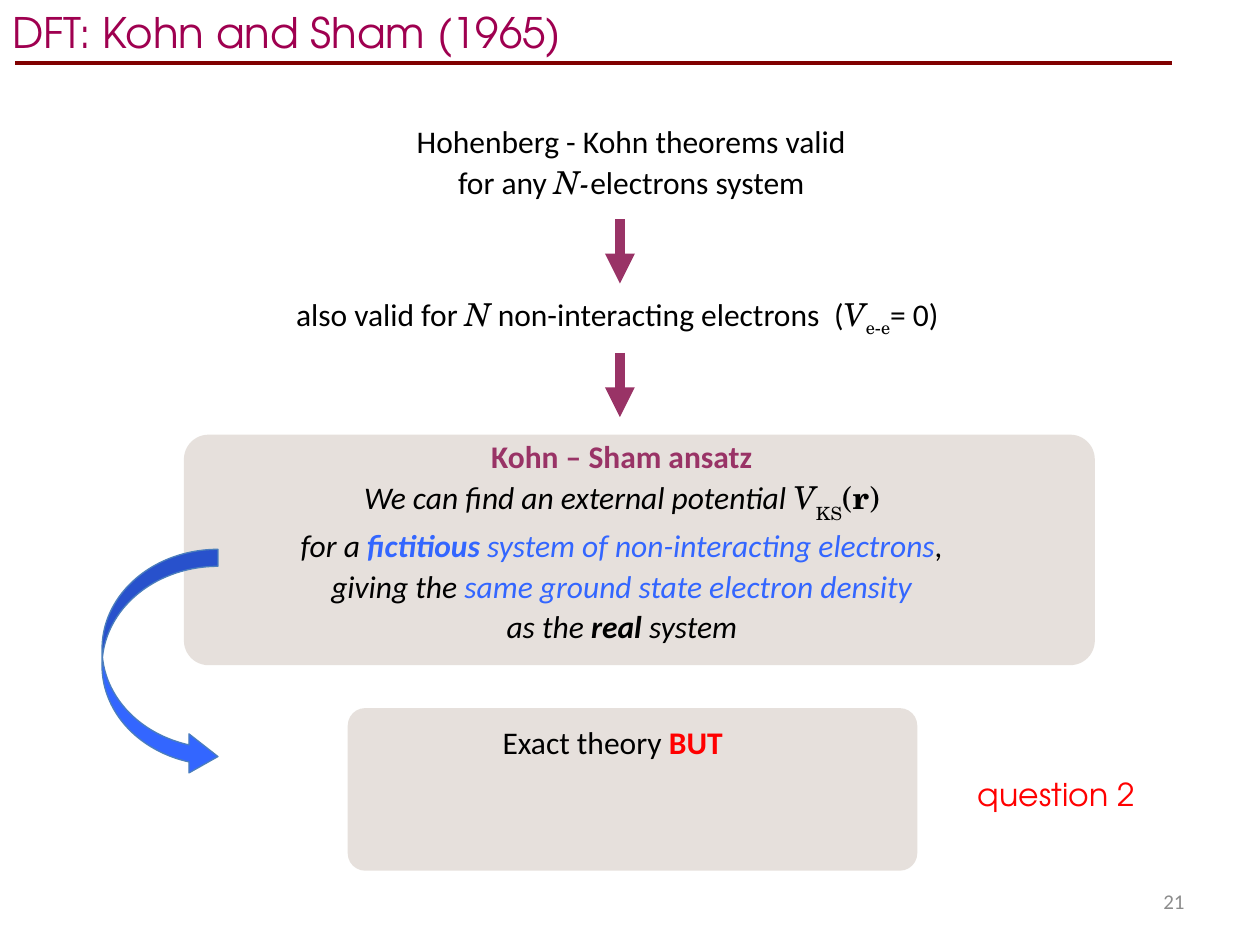
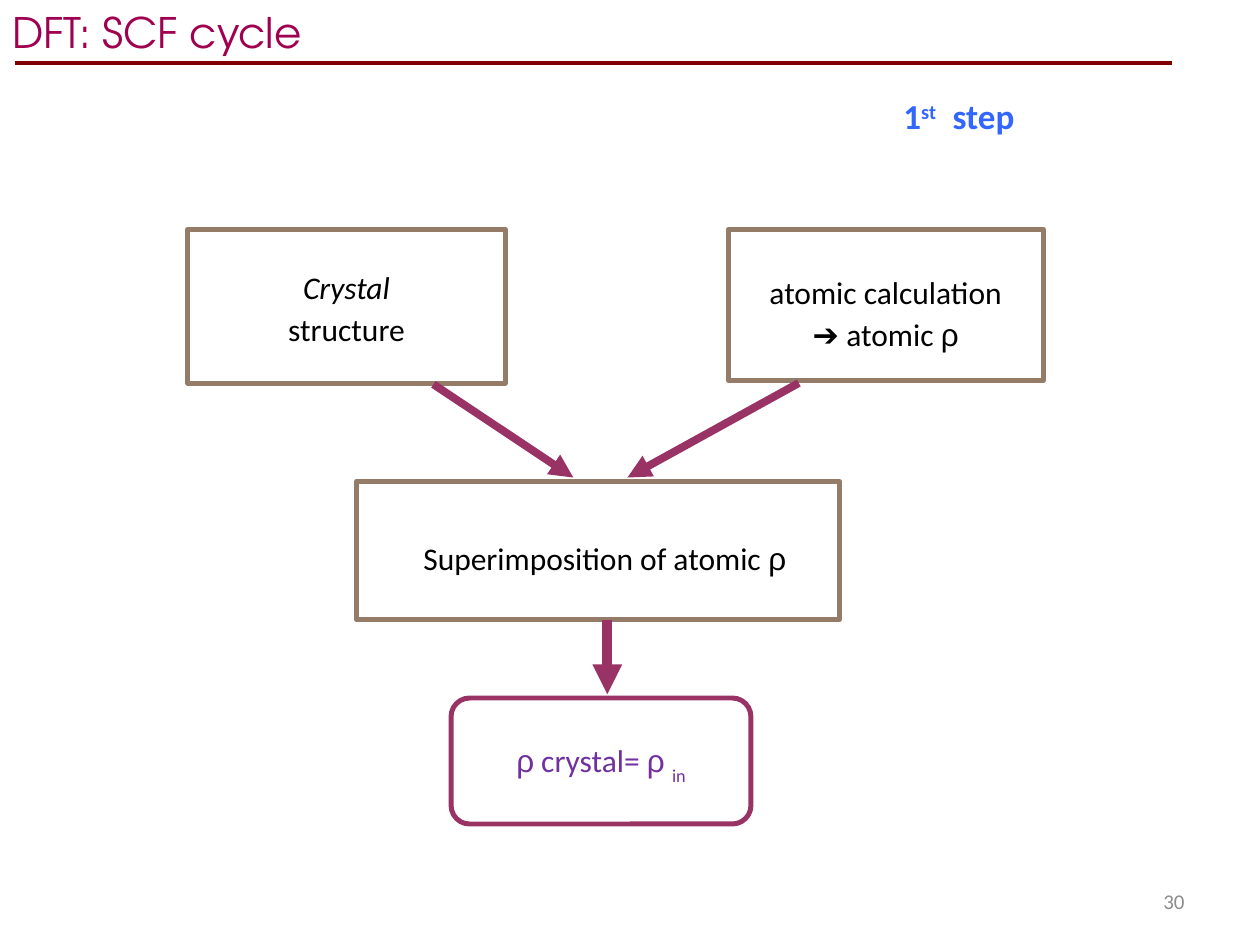
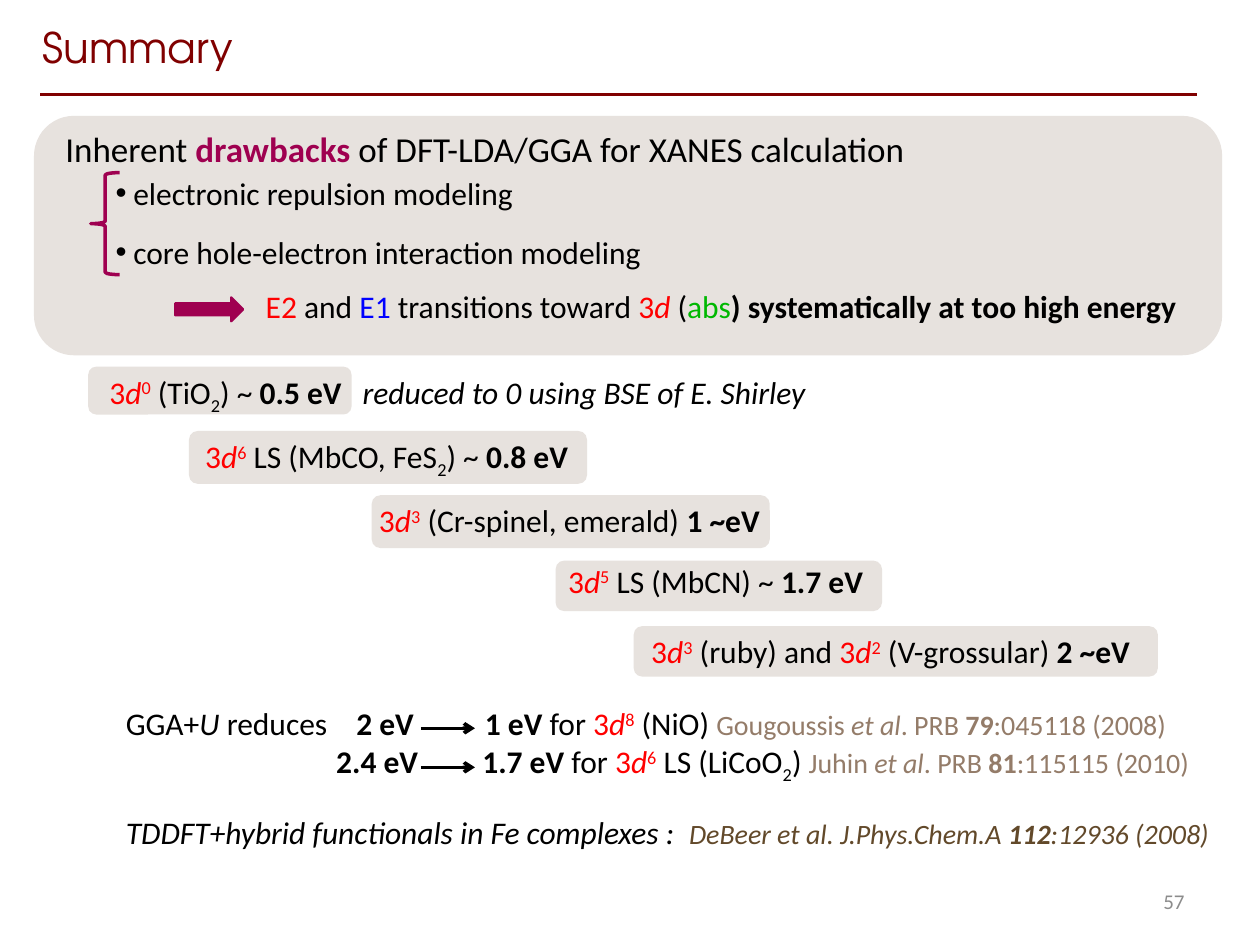
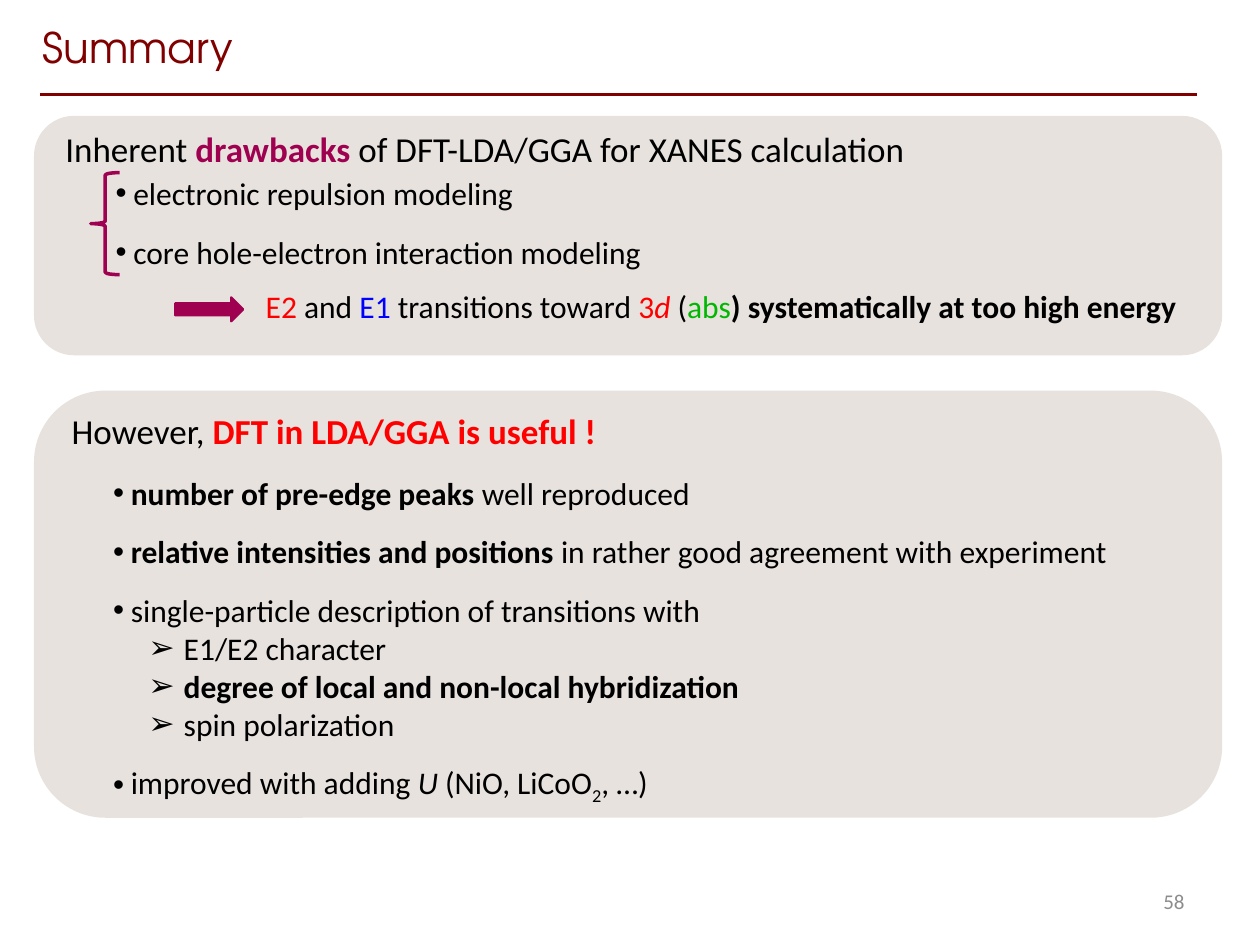
from dataclasses import dataclass

from lxml import etree
from pptx import Presentation
from pptx import util as u
from pptx.dml.color import RGBColor
from pptx.enum import shapes, text
from pptx.oxml.ns import qn

PX = 9144
KIND = shapes.MSO_SHAPE
CENTER = text.PP_ALIGN.CENTER
RIGHT = text.PP_ALIGN.RIGHT
MIDDLE = text.MSO_ANCHOR.MIDDLE


@dataclass(frozen=True)
class Theme:
    body_font: str = "Calibri"
    title_font: str = "TeX Gyre Adventor"
    math_font: str = "TeX Gyre Schola"
    greek_font: str = "Arial"
    black: str = "000000"
    rule: str = "800000"
    berry: str = "9F0050"
    plum: str = "993366"
    taupe: str = "947C69"
    brown: str = "62492A"
    red: str = "FF0000"
    blue: str = "3366FF"
    blue_edge: str = "4B7EBC"
    pure_blue: str = "0000FF"
    green: str = "00B801"
    violet: str = "7030A0"
    grey: str = "8C8C8C"
    title: int = 24
    lead: int = 20
    body: int = 18
    citation: int = 16
    footer: int = 12
    gap: int = 12


T = Theme()


@dataclass(frozen=True)
class Run:
    words: str
    color: str = T.black
    bold: bool = False
    italic: bool = False
    base: int = 0
    font: str = T.body_font
    size: int = T.body


@dataclass(frozen=True)
class Para:
    runs: tuple[Run, ...]
    align: text.PP_ALIGN = text.PP_ALIGN.LEFT
    spacing: float | u.Pt | None = None
    before: int = 0
    bullet: str = ""
    left: int = 0
    hang: int = 0
    tabs: tuple[int, ...] = ()


@dataclass(frozen=True)
class Box:
    left: int
    top: int
    width: int
    height: int


@dataclass(frozen=True)
class Chip:
    panel: Box
    label: Box
    para: Para


@dataclass(frozen=True)
class Arrow:
    start: tuple[int, int]
    end: tuple[int, int]
    width: float = 5.67
    color: str = T.plum
    head: str = "triangle"


def emu(box: Box) -> tuple[int, ...]:
    return box.left * PX, box.top * PX, box.width * PX, box.height * PX


def rgb(color: str) -> RGBColor:
    return RGBColor.from_string(color)


def write_para(paragraph, para: Para) -> None:
    props = paragraph._p.get_or_add_pPr()
    if para.bullet:
        props.set("marL", str(para.left * PX))
        props.set("indent", str(-para.hang * PX))
        etree.SubElement(props, qn("a:buFont"), typeface=T.greek_font)
        etree.SubElement(props, qn("a:buChar"), char=para.bullet)
    if para.tabs:
        stops = etree.SubElement(props, qn("a:tabLst"))
        for stop in para.tabs:
            etree.SubElement(stops, qn("a:tab"), pos=str(stop * PX), algn="l")
    paragraph.alignment = para.align
    paragraph.line_spacing = para.spacing
    if para.before:
        paragraph.space_before = u.Pt(para.before)
    for part in para.runs:
        run = paragraph.add_run()
        run.text = part.words
        run.font.name = part.font
        run.font.size = u.Pt(part.size)
        run.font.bold = part.bold
        run.font.italic = part.italic
        run.font.color.rgb = rgb(part.color)
        if part.base:
            run._r.get_or_add_rPr().set("baseline", str(part.base * 1000))


def add_text(slide, box: Box, *paras: Para, wrap: bool = False, flush: bool = False,
             anchor: text.MSO_ANCHOR = text.MSO_ANCHOR.TOP, grow: bool = True) -> None:
    frame = slide.shapes.add_textbox(*emu(box)).text_frame
    frame.word_wrap = wrap
    frame.vertical_anchor = anchor
    if grow:
        frame.auto_size = text.MSO_AUTO_SIZE.SHAPE_TO_FIT_TEXT
    if flush:
        frame.margin_left = frame.margin_right = frame.margin_top = frame.margin_bottom = 0
    for index, para in enumerate(paras):
        write_para(frame.add_paragraph() if index else frame.paragraphs[0], para)


def add_figure(slide, kind: KIND, box: Box, fill: str = "", alpha: int = 100,
               edge: str = "", edge_width: float = 1, adjust: tuple[float, ...] = ()) -> None:
    figure = slide.shapes.add_shape(kind, *emu(box))
    figure.shadow.inherit = False
    for index, value in enumerate(adjust):
        figure.adjustments[index] = value
    if fill:
        figure.fill.solid()
        figure.fill.fore_color.rgb = rgb(fill)
        if alpha < 100:
            tone = figure._element.spPr.find(qn("a:solidFill"))[0]
            etree.SubElement(tone, qn("a:alpha"), val=str(alpha * 1000))
    else:
        figure.fill.background()
    if edge:
        figure.line.color.rgb = rgb(edge)
        figure.line.width = u.Pt(edge_width)
    else:
        figure.line.fill.background()


def add_panel(slide, box: Box, alpha: int = 22, corner: float = 0.167) -> None:
    add_figure(slide, KIND.ROUNDED_RECTANGLE, box, T.taupe, alpha, adjust=(corner,))


def add_frame(slide, box: Box, edge: str = T.taupe, corner: float = 0) -> None:
    add_figure(slide, KIND.ROUNDED_RECTANGLE, box, edge=edge, edge_width=2.83, adjust=(corner,))


def add_arrow(slide, arrow: Arrow) -> None:
    ends = [length * PX for length in (*arrow.start, *arrow.end)]
    connector = slide.shapes.add_connector(shapes.MSO_CONNECTOR.STRAIGHT, *ends)
    connector.line.color.rgb = rgb(arrow.color)
    connector.line.width = u.Pt(arrow.width)
    props = connector._element.spPr
    if arrow.head:
        etree.SubElement(props.find(qn("a:ln")), qn("a:tailEnd"), type=arrow.head)
    etree.SubElement(props, qn("a:effectLst"))


def start_slide(deck, title: str, number: int, color: str, title_box: Box,
                rule_start: tuple[int, int]):
    slide = deck.slides.add_slide(deck.slide_layouts[6])
    add_text(slide, title_box, Para((Run(title, color, font=T.title_font, size=T.title),)))
    left, top = rule_start
    add_arrow(slide, Arrow(rule_start, (left + 918, top), 2, T.rule, ""))
    add_text(slide, Box(717, 695, 233, 40),
             Para((Run(str(number), T.grey, size=T.footer),), RIGHT),
             wrap=True, anchor=MIDDLE, grow=False)
    return slide


def start_dft(deck, title: str, number: int, width: int):
    return start_slide(deck, title, number, T.berry, Box(0, 0, width, 50), (12, 50))


def start_summary(deck, number: int):
    slide = start_slide(deck, "Summary", number, T.rule, Box(24, 12, 172, 50), (32, 75))
    add_drawbacks(slide)
    return slide


def math(words: str, italic: bool = False, bold: bool = False, base: int = 0) -> Run:
    return Run(words, bold=bold, italic=italic, base=base, font=T.math_font)


def rho(color: str = T.black) -> Run:
    return Run("ρ", color, font=T.greek_font)


def shell(electrons: int) -> tuple[Run, ...]:
    return (Run("3", T.red), Run("d", T.red, italic=True),
            Run(str(electrons), T.red, base=30))


def reference(authors: str, volume: str, pages: str) -> tuple[Run, ...]:
    def cite(words: str, **style: bool) -> Run:
        return Run(words, T.taupe, size=T.citation, **style)

    return (cite(authors), cite(" et al", italic=True), cite(". PRB "),
            cite(volume, bold=True), cite(pages))


def dot(*runs: Run, before: int = T.gap) -> Para:
    return Para(runs, before=before, bullet="•", left=14, hang=14)


def chevron(words: str, bold: bool = False) -> Para:
    return Para((Run(words, bold=bold),), bullet="➢", left=56, hang=28)


def add_drawbacks(slide) -> None:
    add_panel(slide, Box(27, 92, 943, 190))
    add_text(slide, Box(42, 96, 692, 44), Para((
        Run("Inherent ", size=T.lead),
        Run("drawbacks", T.berry, bold=True, size=T.lead),
        Run(" of DFT-LDA/GGA for XANES calculation", size=T.lead))))
    add_text(slide, Box(82, 133, 440, 88),
             dot(Run("electronic repulsion modeling"), before=0),
             dot(Run("core hole-electron interaction modeling")))
    add_text(slide, Box(201, 223, 769, 40), Para((
        Run("E2", T.red), Run(" and "), Run("E1", T.pure_blue),
        Run(" transitions toward "), *shell(0)[:2], Run(" ("), Run("abs", T.green),
        Run(") systematically at too high energy", bold=True))), wrap=True)
    add_figure(slide, KIND.RIGHT_ARROW, Box(139, 236, 54, 19), T.berry,
               edge=T.berry, edge_width=1.25)
    add_figure(slide, KIND.LEFT_BRACE, Box(72, 137, 23, 81), edge=T.berry, edge_width=2)


def build_kohn_sham(deck) -> None:
    slide = start_dft(deck, "DFT: Kohn and Sham (1965)", 21, 473)

    def line(*runs: Run) -> Para:
        return Para(runs, CENTER, 1.07)

    def said(words: str, color: str = T.black, bold: bool = False) -> Run:
        return Run(words, color, bold, italic=True)

    add_panel(slide, Box(146, 345, 723, 183), 23, 0.107)
    add_text(slide, Box(322, 95, 358, 64),
             line(Run("Hohenberg - Kohn theorems valid")),
             line(Run("for any "), math("N-", italic=True), Run("electrons system")),
             flush=True)
    add_text(slide, Box(235, 232, 544, 32), Para((
        Run("also valid for "), math("N", italic=True),
        Run(" non-interacting electrons\t("), math("V", italic=True),
        math("e-e", base=-25), Run("= 0)")), spacing=1.07, tabs=(427,)),
        wrap=True, flush=True)
    for top in (174, 280):
        add_arrow(slide, Arrow((492, top), (492, top + 51)))
    add_text(slide, Box(101, 345, 785, 162),
             line(Run("Kohn – Sham ansatz", T.plum, bold=True)),
             line(said("We can find an external potential "), math("V", italic=True),
                  math("KS", base=-33), math("("), math("r", bold=True), math(")")),
             line(said("for a "), said("fictitious", T.blue, True),
                  said(" system of non-interacting electrons", T.blue), said(",")),
             line(said("giving the "), said("same ground state electron density", T.blue)),
             line(said("as the "), said("real", bold=True), said(" system")),
             wrap=True, flush=True)
    add_figure(slide, KIND.CURVED_RIGHT_ARROW, Box(81, 436, 92, 180), T.blue,
               edge=T.blue_edge, edge_width=0.75, adjust=(0.147, 0.337, 0.25))
    add_panel(slide, Box(276, 562, 452, 129), 23, 0.107)
    add_text(slide, Box(389, 569, 197, 40),
             Para((Run("Exact theory "), Run("BUT", T.red, bold=True))))
    add_text(slide, Box(766, 610, 145, 40),
             Para((Run("question 2", T.red, font=T.title_font),)))


def build_scf_cycle(deck) -> None:
    slide = start_dft(deck, "DFT: SCF cycle", 30, 255)

    def line(*runs: Run) -> Para:
        return Para(runs, CENTER, u.Pt(24.1))

    def add_step(frame: Box, label: Box, *paras: Para,
                 edge: str = T.taupe, corner: float = 0) -> None:
        add_frame(slide, frame, edge, corner)
        add_text(slide, label, *paras, wrap=True, flush=True, anchor=MIDDLE)

    add_step(Box(149, 182, 252, 122), Box(149, 209, 252, 67),
             line(Run("Crystal", italic=True)), line(Run("structure")))
    add_step(Box(578, 182, 250, 120), Box(578, 213, 250, 67),
             line(Run("atomic calculation")), line(Run("➔ atomic "), rho()))
    add_step(Box(283, 382, 383, 110), Box(291, 425, 378, 32),
             line(Run("Superimposition of atomic "), rho()))
    add_step(Box(358, 554, 238, 100), Box(361, 591, 232, 30),
             Para((rho(T.violet), Run(" crystal= ", T.violet), rho(T.violet),
                   Run(" ", T.violet), Run("in", T.violet, base=-33)), CENTER),
             edge=T.plum, corner=0.147)
    for arrow in (Arrow((344, 305), (455, 379), 4.5),
                  Arrow((634, 304), (498, 379), 4.5),
                  Arrow((482, 492), (482, 551))):
        add_arrow(slide, arrow)

    def step(words: str, base: int = 0) -> Run:
        return Run(words, T.blue, bold=True, base=base, size=T.lead)

    add_text(slide, Box(717, 75, 91, 34),
             Para((step("1"), step("st", 30), step("\tstep")),
                  spacing=u.Pt(24.1), tabs=(39,)), flush=True)


def build_shifts(deck) -> None:
    slide = start_summary(deck, 57)
    low = Run("2", base=-25)
    chips = (
        Chip(Box(70, 291, 209, 38), Box(77, 291, 586, 40), Para((
            *shell(0), Run(" (TiO"), low, Run(") ~ "), Run("0.5 eV", bold=True),
            Run("\treduced to 0 using BSE of E. Shirley", italic=True)), tabs=(201,))),
        Chip(Box(150, 342, 316, 42), Box(153, 342, 313, 40), Para((
            *shell(6), Run(" LS (MbCO, FeS"), low, Run(") ~ "), Run("0.8 eV", bold=True)))),
        Chip(Box(295, 393, 316, 42), Box(291, 393, 336, 40), Para((
            *shell(3), Run(" (Cr-spinel, emerald) "), Run("1 ~eV", bold=True)))),
        Chip(Box(441, 445, 259, 40), Box(441, 441, 259, 40), Para((
            *shell(5), Run(" LS (MbCN) ~ "), Run("1.7 eV", bold=True)))),
        Chip(Box(503, 497, 416, 40), Box(507, 497, 411, 40), Para((
            *shell(3), Run(" (ruby) and "), *shell(2), Run(" (V-grossular) "),
            Run("2 ~eV", bold=True)))),
    )
    for chip in chips:
        add_panel(slide, chip.panel)
        add_text(slide, chip.label, chip.para)

    add_text(slide, Box(90, 554, 867, 71),
             Para((Run("GGA+"), Run("U ", italic=True), Run("reduces"),
                   Run("\t2 eV\t1 eV ", bold=True), Run("for "), *shell(8),
                   Run(" (NiO) "), *reference("Gougoussis", "79", ":045118 (2008)")),
                  tabs=(183, 285)),
             Para((Run("\t2.4 eV\t1.7 eV ", bold=True), Run("for "), *shell(6),
                   Run(" LS (LiCoO"), low, Run(") "),
                   *reference("Juhin", "81", ":115115 (2010)")),
                  tabs=(167, 283)))
    for top in (578, 609):
        add_arrow(slide, Arrow((334, top), (377, top), 2, T.black, "arrow"))

    def cite(words: str, bold: bool = False) -> Run:
        return Run(words, T.brown, bold, italic=True, size=T.citation)

    add_text(slide, Box(90, 640, 895, 40), Para((
        Run("TDDFT+hybrid functionals in Fe complexes :", italic=True),
        cite("\tDeBeer et al. J.Phys.Chem.A "), cite("112", True),
        cite(":12936 (2008)")), tabs=(447,)))


def build_usefulness(deck) -> None:
    slide = start_summary(deck, 58)
    add_panel(slide, Box(27, 310, 943, 339))
    add_text(slide, Box(47, 320, 440, 77), Para((
        Run("However, ", size=T.lead),
        Run("DFT in LDA/GGA is useful !", T.red, bold=True, size=T.lead))))
    add_text(slide, Box(80, 371, 817, 273),
             dot(Run("number of pre-edge peaks ", bold=True), Run("well reproduced"), before=0),
             dot(Run("relative intensities and positions ", bold=True),
                 Run("in rather good agreement with experiment")),
             dot(Run("single-particle description of transitions with")),
             chevron("E1/E2 character"),
             chevron("degree of local and non-local hybridization", bold=True),
             chevron("spin polarization"),
             dot(Run("improved with adding "), Run("U", italic=True),
                 Run(" (NiO, LiCoO"), Run("2", base=-25), Run(", …)")))


def main() -> None:
    deck = Presentation()
    deck.slide_width, deck.slide_height = 1000 * PX, 750 * PX
    build_kohn_sham(deck)
    build_scf_cycle(deck)
    build_shifts(deck)
    build_usefulness(deck)
    deck.save("out.pptx")


if __name__ == "__main__":
    main()
